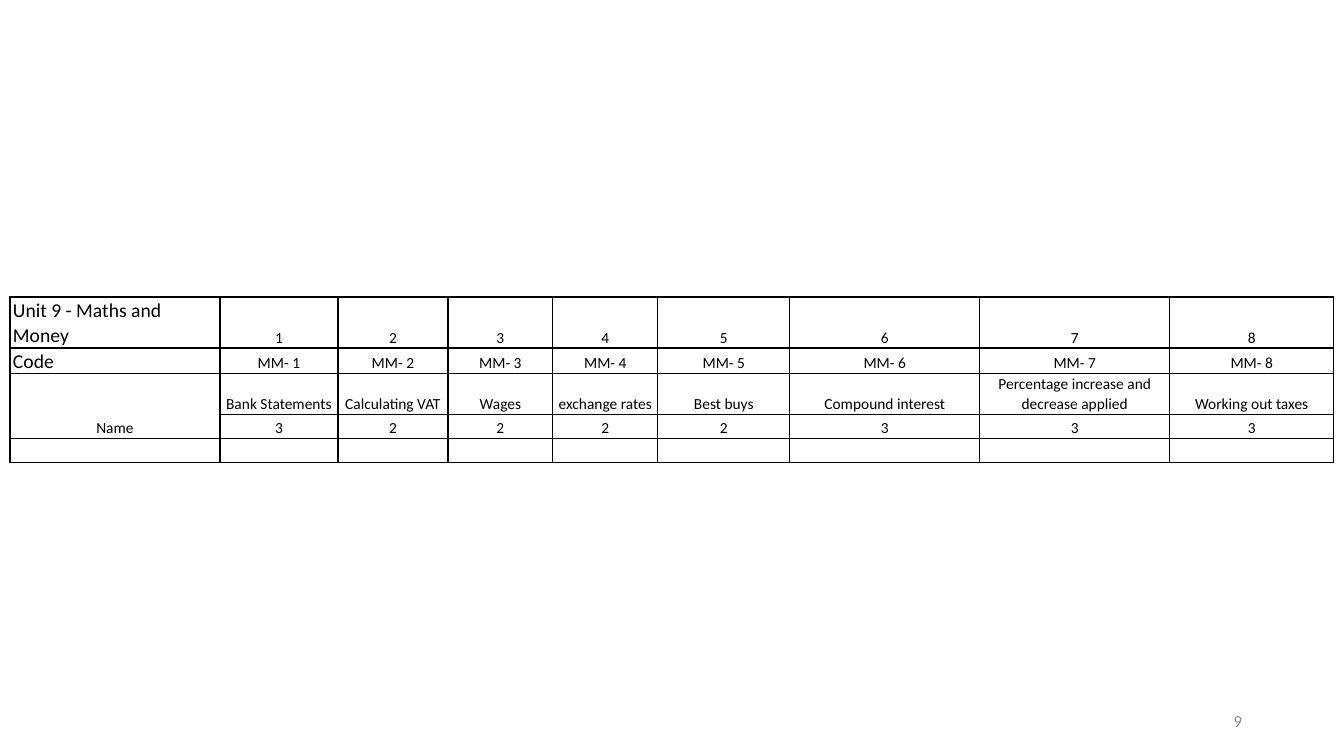
from lxml import etree
from pptx import Presentation
from pptx.dml.color import RGBColor
from pptx.enum.text import MSO_ANCHOR, PP_ALIGN
from pptx.oxml.ns import qn
from pptx.util import Emu, Pt

LEFT, CENTER, RIGHT = PP_ALIGN.LEFT, PP_ALIGN.CENTER, PP_ALIGN.RIGHT
BOTTOM, MIDDLE = MSO_ANCHOR.BOTTOM, MSO_ANCHOR.MIDDLE

COLORS = {"ink": "000000", "page_number": "8C8C8C"}
FONT = "Calibri"

TOPICS = [
    ("Bank Statements", 3),
    ("Calculating VAT", 2),
    ("Wages", 2),
    ("exchange rates", 2),
    ("Best buys", 2),
    ("Compound interest", 3),
    ("Percentage increase and decrease applied", 3),
    ("Working out taxes", 3),
]
NUMBERS = range(1, len(TOPICS) + 1)
ROWS = [
    ["Unit 9 - Maths and Money", *NUMBERS],
    ["Code", *[f"MM- {number}" for number in NUMBERS]],
    ["Name", *[topic for topic, _ in TOPICS]],
    ["", *[score for _, score in TOPICS]],
    [""] * (len(TOPICS) + 1),
]
HEADING_ROWS = 2
NAME_ROW = 2

# Lengths in px
PAGE_SIZE = (1344, 756)
TABLE_AT = (10, 297)
COLUMN_WIDTHS = [210, 118, 110, 105, 105, 132, 190, 190, 164]
ROW_HEIGHTS = [51, 25, 41, 24, 24]
NUMBER_BOX = (950, 701, 302, 40)
CELL_INSET = 3


def px(length):
    return Emu(round(length * 914400 / 100.8))


def write(frame, text, size=11, color="ink", align=CENTER, spacing=None):
    para = frame.paragraphs[0]
    para.alignment = align
    para.line_spacing = spacing
    if not text:
        # An empty cell keeps its row low only if its end mark is small too
        etree.SubElement(para._p, qn("a:endParaRPr"), sz=str(size * 100))
        return
    span = para.add_run()
    span.text = text
    span.font.name = FONT
    span.font.size = Pt(size)
    span.font.color.rgb = RGBColor.from_string(COLORS[color])


def add_borders(cell, color="ink", width=1):
    properties = cell._tc.get_or_add_tcPr()
    for index, side in enumerate(("lnL", "lnR", "lnT", "lnB")):
        line = etree.Element(qn(f"a:{side}"), w=str(Pt(width)))
        fill = etree.SubElement(line, qn("a:solidFill"))
        etree.SubElement(fill, qn("a:srgbClr"), val=COLORS[color])
        properties.insert(index, line)


def add_unit_table(page):
    size = (sum(COLUMN_WIDTHS), sum(ROW_HEIGHTS))
    table = page.shapes.add_table(
        len(ROWS), len(COLUMN_WIDTHS), *map(px, TABLE_AT + size)
    ).table
    table.first_row = table.horz_banding = False
    for column, width in zip(table.columns, COLUMN_WIDTHS):
        column.width = px(width)
    for row, height in zip(table.rows, ROW_HEIGHTS):
        row.height = px(height)

    for row_index, values in enumerate(ROWS):
        for column_index, value in enumerate(values):
            cell = table.cell(row_index, column_index)
            cell.fill.background()
            cell.vertical_anchor = BOTTOM
            cell.margin_left = cell.margin_right = px(CELL_INSET)
            cell.margin_top = cell.margin_bottom = 0
            add_borders(cell)
            heading = column_index == 0 and row_index < HEADING_ROWS
            write(
                cell.text_frame,
                str(value),
                size=14 if heading else 11,
                align=LEFT if heading else CENTER,
                spacing=1.07,
            )
    table.cell(NAME_ROW, 0).merge(table.cell(NAME_ROW + 1, 0))


def add_page_number(page, number):
    frame = page.shapes.add_textbox(*map(px, NUMBER_BOX)).text_frame
    frame.word_wrap = True
    frame.vertical_anchor = MIDDLE
    write(frame, number, size=12, color="page_number", align=RIGHT)


def main():
    deck = Presentation()
    deck.slide_width, deck.slide_height = map(px, PAGE_SIZE)
    page = deck.slides.add_slide(deck.slide_layouts[6])
    add_page_number(page, "9")
    add_unit_table(page)
    deck.save("out.pptx")


if __name__ == "__main__":
    main()
